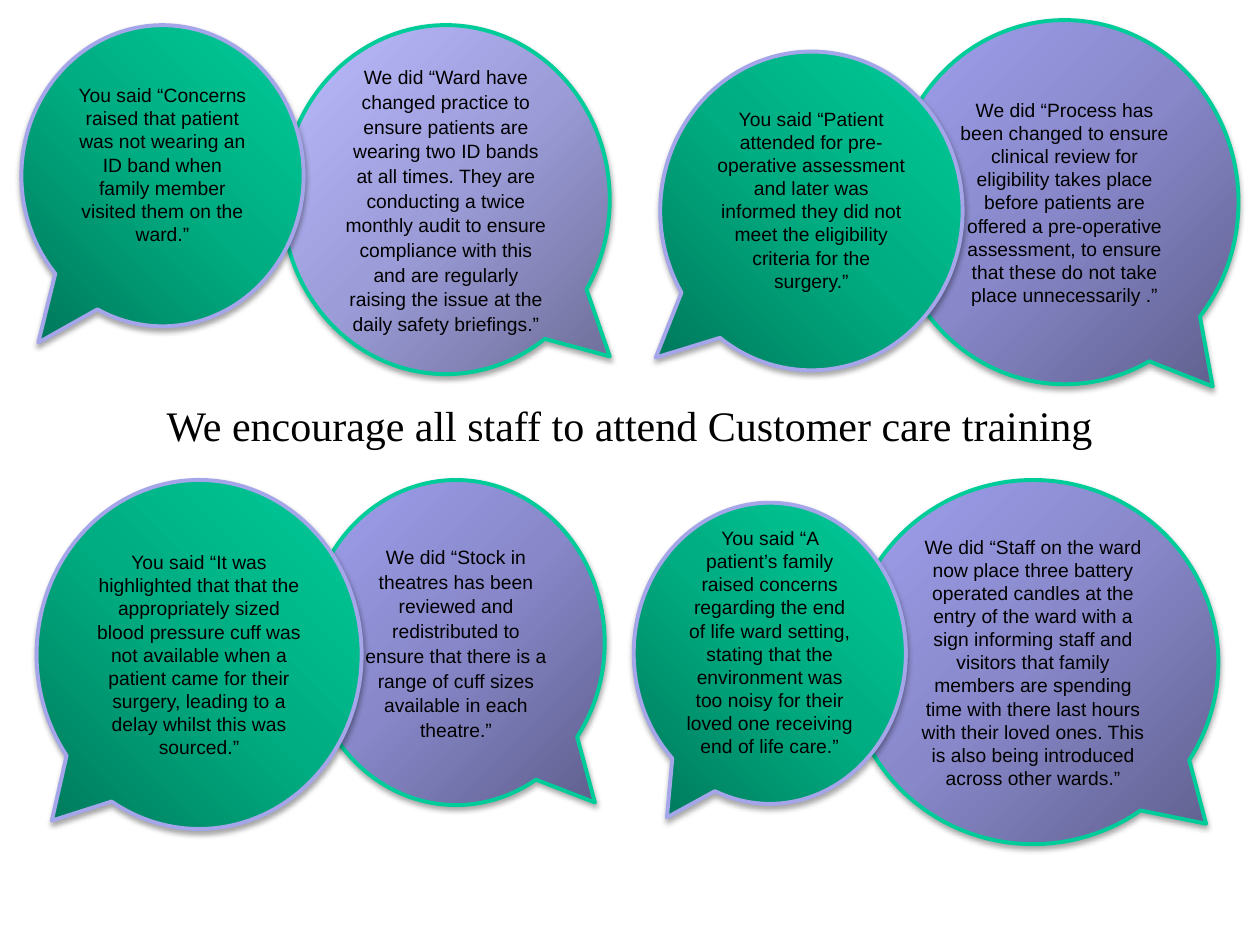
from dataclasses import dataclass

from pptx import Presentation
from pptx.dml.color import RGBColor
from pptx.enum.shapes import MSO_SHAPE
from pptx.enum.text import MSO_ANCHOR, MSO_AUTO_SIZE, PP_ALIGN
from pptx.oxml import parse_xml
from pptx.oxml.ns import nsdecls, qn
from pptx.shapes.autoshape import Shape
from pptx.slide import Slide
from pptx.util import Inches, Pt

CALLOUT = MSO_SHAPE.OVAL_CALLOUT
CENTER = PP_ALIGN.CENTER
MIDDLE = MSO_ANCHOR.MIDDLE
NO_AUTOFIT = MSO_AUTO_SIZE.NONE

BLACK = RGBColor(0x00, 0x00, 0x00)
GREEN = RGBColor(0x00, 0xCC, 0x99)
MID_GREEN = RGBColor(0x00, 0xAC, 0x81)
DARK_GREEN = RGBColor(0x00, 0x79, 0x5B)
LILAC = RGBColor(0xA5, 0xA5, 0xE9)
PURPLE = RGBColor(0xA0, 0xA0, 0xEE)
MID_PURPLE = RGBColor(0x87, 0x87, 0xC9)
DARK_PURPLE = RGBColor(0x5F, 0x5F, 0x8D)
PALE_PURPLE = RGBColor(0xBB, 0xBB, 0xFF)
MID_PALE_PURPLE = RGBColor(0x9C, 0x9C, 0xD9)
DARK_PALE_PURPLE = RGBColor(0x6E, 0x6E, 0x98)


@dataclass(frozen=True)
class Style:
    stops: tuple[RGBColor, RGBColor, RGBColor]
    outline: RGBColor
    dark_side: str


@dataclass(frozen=True)
class Bubble:
    left: float
    top: float
    width: float
    height: float
    tail: tuple[float, float]
    style: Style
    text: str
    line_spacing: float = 1.0
    bottom_inset: float = 0.05


YOU_SAID = Style((DARK_GREEN, MID_GREEN, GREEN), LILAC, "left")
WE_DID = Style((DARK_PURPLE, MID_PURPLE, PURPLE), GREEN, "right")
WE_DID_PALE = Style((DARK_PALE_PURPLE, MID_PALE_PURPLE, PALE_PURPLE), GREEN, "right")
LOOSE = 1.07
RAISED = 0.23

BUBBLES = [
    Bubble(6.73, 3.81, 2.94, 2.89, (0.467, 0.444), WE_DID,
           "We did “Staff on the ward now place three battery operated candles at the "
           "entry of the ward with a sign informing staff and visitors that family "
           "members are spending time with there last hours with their loved ones. "
           "This is also being introduced across other wards.”"),
    Bubble(2.44, 3.81, 2.36, 2.58, (0.467, 0.492), WE_DID,
           "We did “Stock in theatres has been reviewed and redistributed to ensure "
           "that there is a range of cuff sizes available in each theatre.”",
           line_spacing=LOOSE),
    Bubble(0.29, 3.81, 2.58, 2.77, (-0.453, 0.476), YOU_SAID,
           "You said “It was highlighted that that the appropriately sized blood "
           "pressure cuff was not available when a patient came for their surgery, "
           "leading to a delay whilst this was sourced.”"),
    Bubble(2.24, 0.2, 2.6, 2.77, (0.5, 0.449), WE_DID_PALE,
           "We did “Ward have changed practice to ensure patients are wearing two ID "
           "bands at all times. They are conducting a twice monthly audit to ensure "
           "compliance with this and are regularly raising the issue at the daily "
           "safety briefings.”",
           line_spacing=LOOSE),
    Bubble(7.07, 0.16, 2.76, 2.89, (0.426, 0.506), WE_DID,
           "We did “Process has been changed to ensure clinical review for "
           "eligibility takes place before patients are offered a pre-operative "
           "assessment, to ensure that these do not take place unnecessarily .”"),
    Bubble(5.03, 3.99, 2.16, 2.39, (-0.378, 0.545), YOU_SAID,
           "You said “A patient’s family raised concerns regarding the end of life "
           "ward setting, stating that the environment was too noisy for their loved "
           "one receiving end of life care.”",
           bottom_inset=RAISED),
    Bubble(5.24, 0.41, 2.4, 2.53, (-0.515, 0.46), YOU_SAID,
           "You said “Patient attended for pre-operative assessment and later was "
           "informed they did not meet the eligibility criteria for the surgery.”",
           bottom_inset=RAISED),
    Bubble(0.17, 0.2, 2.24, 2.39, (-0.44, 0.554), YOU_SAID,
           "You said “Concerns raised that patient was not wearing an ID band when "
           "family member visited them on the ward.”",
           bottom_inset=RAISED),
]


def apply_gradient(shape: Shape, style: Style) -> None:
    stops = "".join(
        f'<a:gs pos="{index * 50000}"><a:srgbClr val="{color}"/></a:gs>'
        for index, color in enumerate(style.stops)
    )
    left, right = (0, 100000) if style.dark_side == "left" else (100000, 0)
    gradient = parse_xml(
        f'<a:gradFill {nsdecls("a")} rotWithShape="1"><a:gsLst>{stops}</a:gsLst>'
        f'<a:path path="circle"><a:fillToRect l="{left}" t="100000" r="{right}" b="0"/>'
        "</a:path></a:gradFill>"
    )
    shape._element.spPr.find(qn("a:prstGeom")).addnext(gradient)


def apply_shadow(shape: Shape) -> None:
    shape.shadow.inherit = False
    shadow = parse_xml(
        f'<a:outerShdw {nsdecls("a")} blurRad="{Pt(3.15)}" dist="{Pt(1.8)}" '
        'dir="5400000" rotWithShape="0"><a:srgbClr val="000000">'
        '<a:alpha val="35000"/></a:srgbClr></a:outerShdw>'
    )
    shape._element.spPr.find(qn("a:effectLst")).append(shadow)


def write_text(shape: Shape, text: str, font_name: str, size: float,
               line_spacing: float = 1.0) -> None:
    frame = shape.text_frame
    frame.text = text
    frame.word_wrap = True
    frame.auto_size = NO_AUTOFIT
    frame.vertical_anchor = MIDDLE
    paragraph = frame.paragraphs[0]
    paragraph.alignment = CENTER
    paragraph.line_spacing = line_spacing
    paragraph.font.name = font_name
    paragraph.font.size = Pt(size)
    paragraph.font.color.rgb = BLACK


def draw_bubble(page: Slide, bubble: Bubble) -> None:
    shape = page.shapes.add_shape(
        CALLOUT, Inches(bubble.left), Inches(bubble.top),
        Inches(bubble.width), Inches(bubble.height),
    )
    shape.adjustments[0], shape.adjustments[1] = bubble.tail
    apply_gradient(shape, bubble.style)
    shape.line.color.rgb = bubble.style.outline
    shape.line.width = Pt(2.25)
    apply_shadow(shape)
    write_text(shape, bubble.text, "Arial", 11, bubble.line_spacing)
    shape.text_frame.margin_bottom = Inches(bubble.bottom_inset)


def draw_title(page: Slide) -> None:
    title = page.shapes.title
    title.left, title.top = Inches(0.75), Inches(3.12)
    title.width, title.height = Inches(8.5), Inches(0.5)
    write_text(title, "We encourage all staff to attend Customer care training",
               "Times New Roman", 24)


def main() -> None:
    deck = Presentation()
    deck.slide_width, deck.slide_height = Inches(10), Inches(7.5)
    page = deck.slides.add_slide(deck.slide_layouts.get_by_name("Title Only"))
    draw_title(page)
    for bubble in BUBBLES:
        draw_bubble(page, bubble)
    deck.save("out.pptx")


if __name__ == "__main__":
    main()
